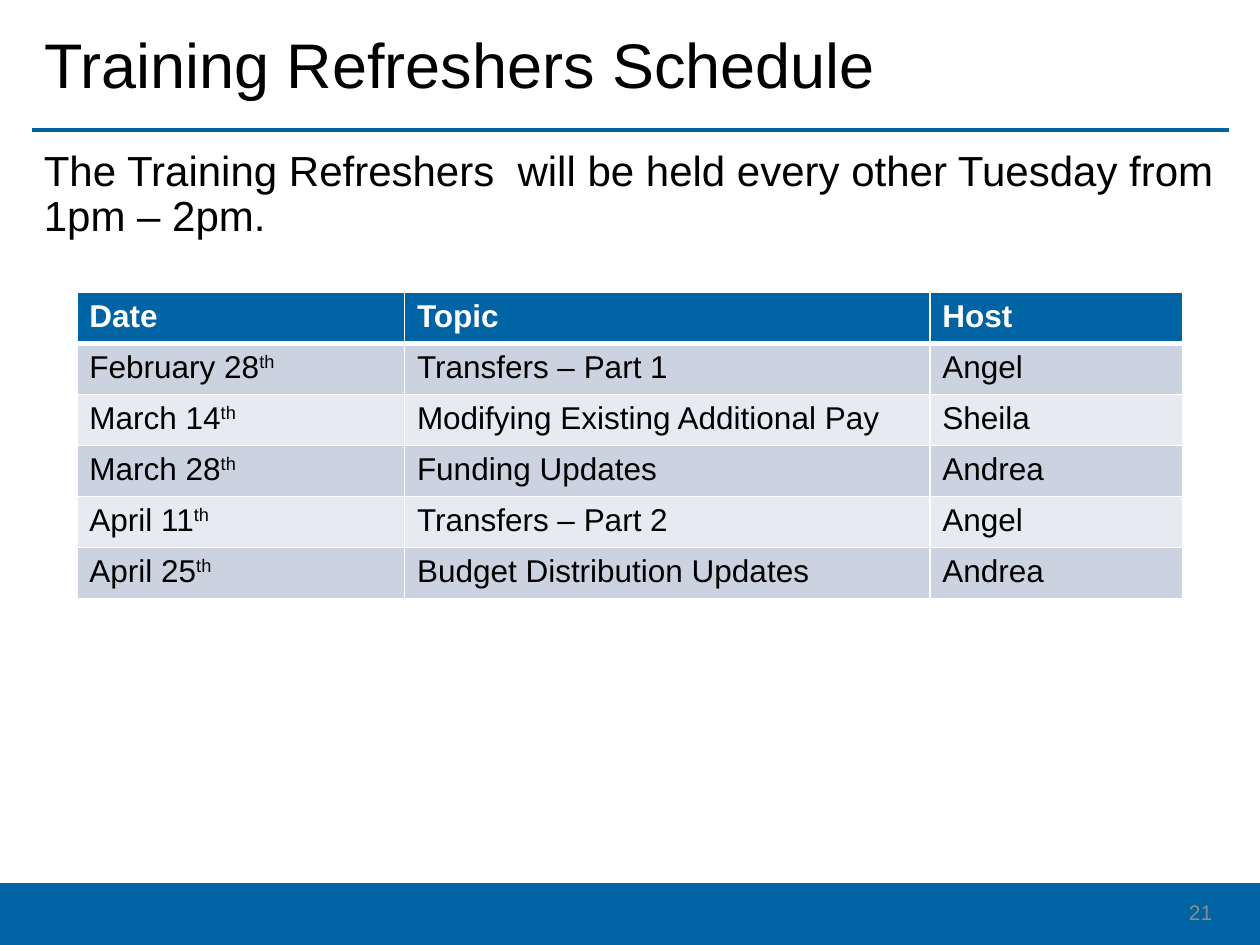
from lxml import etree
from pptx import Presentation
from pptx.dml.color import RGBColor
from pptx.enum import shapes, text
from pptx.oxml import ns
from pptx.util import Inches, Pt

COLORS = {"blue": "0064A4", "white": "FFFFFF", "black": "000000",
          "odd": "CCD3E0", "even": "E7EAF0", "grey": "8C8C8C"}
HEADINGS = ("Date", "Topic", "Host")
SESSIONS = [
    ("February 28", "Transfers – Part 1", "Angel"),
    ("March 14", "Modifying Existing Additional Pay", "Sheila"),
    ("March 28", "Funding Updates", "Andrea"),
    ("April 11", "Transfers – Part 2", "Angel"),
    ("April 25", "Budget Distribution Updates", "Andrea"),
]
COLUMN_WIDTHS = (2.6, 4.17, 2.01)


def rgb(name):
    return RGBColor.from_string(COLORS[name])


def style_font(font, size, color, bold=False):
    values = {"name": "Arial", "size": Pt(size), "bold": bold}
    for key, value in values.items():
        setattr(font, key, value)
    font.color.rgb = rgb(color)


def fill_text(holder, box, wording, size, color="black", **paragraph_format):
    """Place a text holder in its box and write one formatted paragraph."""
    for key, value in zip(("left", "top", "width", "height"), box):
        setattr(holder, key, Inches(value))
    frame = holder.text_frame
    frame.word_wrap = True
    frame.auto_size = text.MSO_AUTO_SIZE.NONE
    paragraph = frame.paragraphs[0]
    for key, value in paragraph_format.items():
        setattr(paragraph, key, value)
    run = paragraph.add_run()
    run.text = wording
    style_font(run.font, size, color)
    return frame


def add_heading(slide, left, top, width, height):
    frame = fill_text(slide.shapes.title, (left, top, width, height),
                      "Training Refreshers Schedule", 36,
                      alignment=text.PP_ALIGN.LEFT, line_spacing=0.9)
    frame.vertical_anchor = text.MSO_ANCHOR.MIDDLE
    bottom = Inches(top + height)
    rule = slide.shapes.add_connector(shapes.MSO_CONNECTOR.STRAIGHT,
                                      Inches(left), bottom, Inches(left + width), bottom)
    rule.line.color.rgb = rgb("blue")
    rule.line.width = Pt(2.25)
    etree.SubElement(rule._element.spPr, ns.qn("a:effectLst"))


def add_intro(slide, *box):
    intro = slide.shapes.add_textbox(0, 0, 0, 0)
    fill_text(intro, box,
              "The Training Refreshers  will be held every other Tuesday from 1pm – 2pm.",
              24, line_spacing=0.9)


def add_borders(cell, **widths):
    """Draw white cell borders; widths in points, keyed L, R, T, B in that order."""
    properties = cell._tc.get_or_add_tcPr()
    for position, (side, width) in enumerate(widths.items()):
        border = etree.Element(ns.qn(f"a:ln{side}"), w=str(Pt(width)))
        fill = etree.SubElement(border, ns.qn("a:solidFill"))
        etree.SubElement(fill, ns.qn("a:srgbClr"), val=COLORS["white"])
        properties.insert(position, border)


def add_schedule(slide, left, top, width, height):
    rows = [HEADINGS, *SESSIONS]
    table = slide.shapes.add_table(len(rows), len(HEADINGS), Inches(left), Inches(top),
                                   Inches(width), Inches(height)).table
    for column, share in zip(table.columns, COLUMN_WIDTHS):
        column.width = Inches(width * share / sum(COLUMN_WIDTHS))
    for r, row in enumerate(rows):
        header = r == 0
        band = "blue" if header else "odd" if r % 2 else "even"
        for c, wording in enumerate(row):
            cell = table.cell(r, c)
            cell.fill.solid()
            cell.fill.fore_color.rgb = rgb(band)
            add_borders(cell, L=1, R=1, T=3 if r == 1 else 1, B=3 if header else 1)
            paragraph = cell.text_frame.paragraphs[0]
            is_date = c == 0 and not header
            for part in (wording, "th") if is_date else (wording,):
                run = paragraph.add_run()
                run.text = part
                style_font(run.font, 18, "white" if header else "black", header)
            if is_date:
                run.font._element.set("baseline", "30000")


def add_footer(slide, left, top, width, height):
    band = slide.shapes.add_shape(shapes.MSO_SHAPE.RECTANGLE, Inches(left), Inches(top),
                                  Inches(width), Inches(height))
    band.shadow.inherit = False
    band.fill.solid()
    band.fill.fore_color.rgb = rgb("blue")
    band.line.fill.background()
    page_number = slide.shapes.add_textbox(0, 0, 0, 0)
    frame = fill_text(page_number, (left + width - 2.53, top + 0.03, 2.25, 0.4),
                      "21", 12, "grey", alignment=text.PP_ALIGN.RIGHT)
    frame.vertical_anchor = text.MSO_ANCHOR.MIDDLE


def main():
    deck = Presentation()
    deck.slide_width, deck.slide_height = Inches(10), Inches(7.5)
    slide = deck.slides.add_slide(deck.slide_layouts[5])
    add_heading(slide, 0.25, 0.05, 9.5, 0.98)
    add_intro(slide, 0.25, 1.14, 9.5, 5.61)
    add_footer(slide, 0, 7.01, 10, 0.5)
    add_schedule(slide, 0.61, 2.32, 8.78, 2.43)
    deck.save("out.pptx")


if __name__ == "__main__":
    main()
